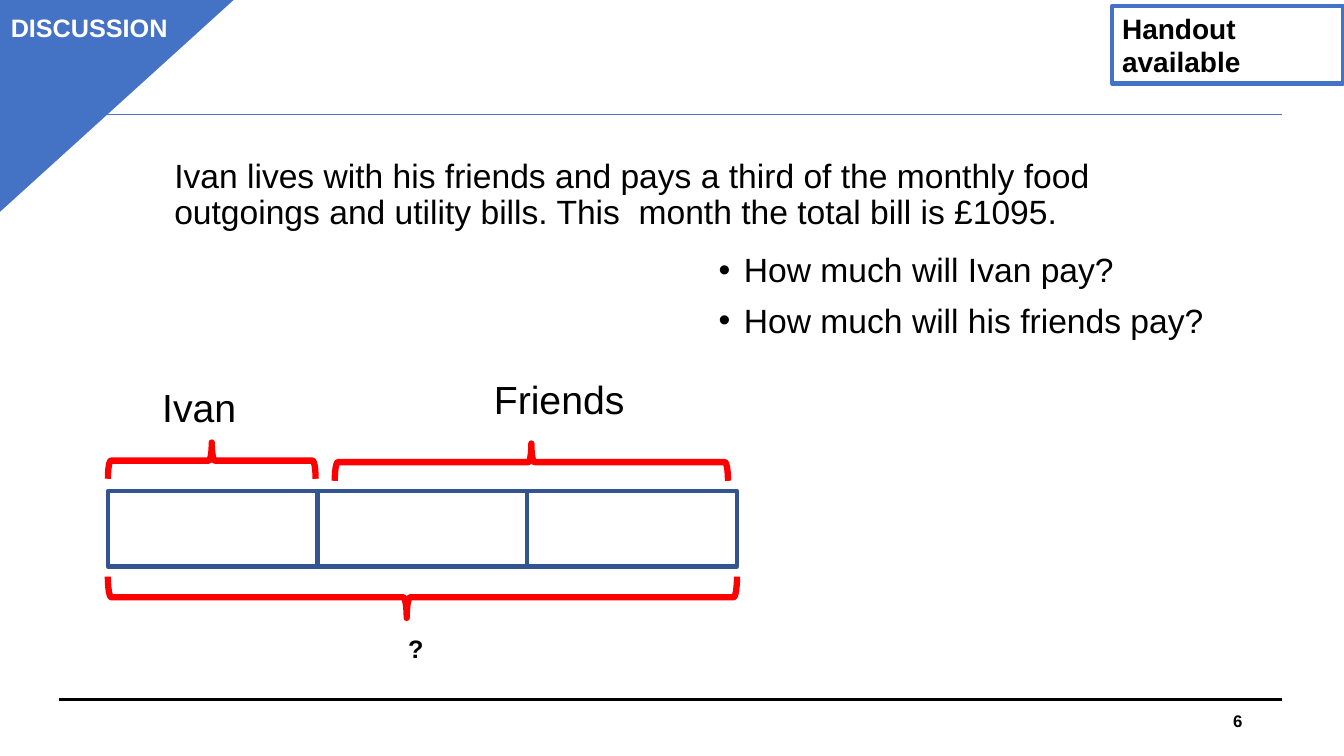
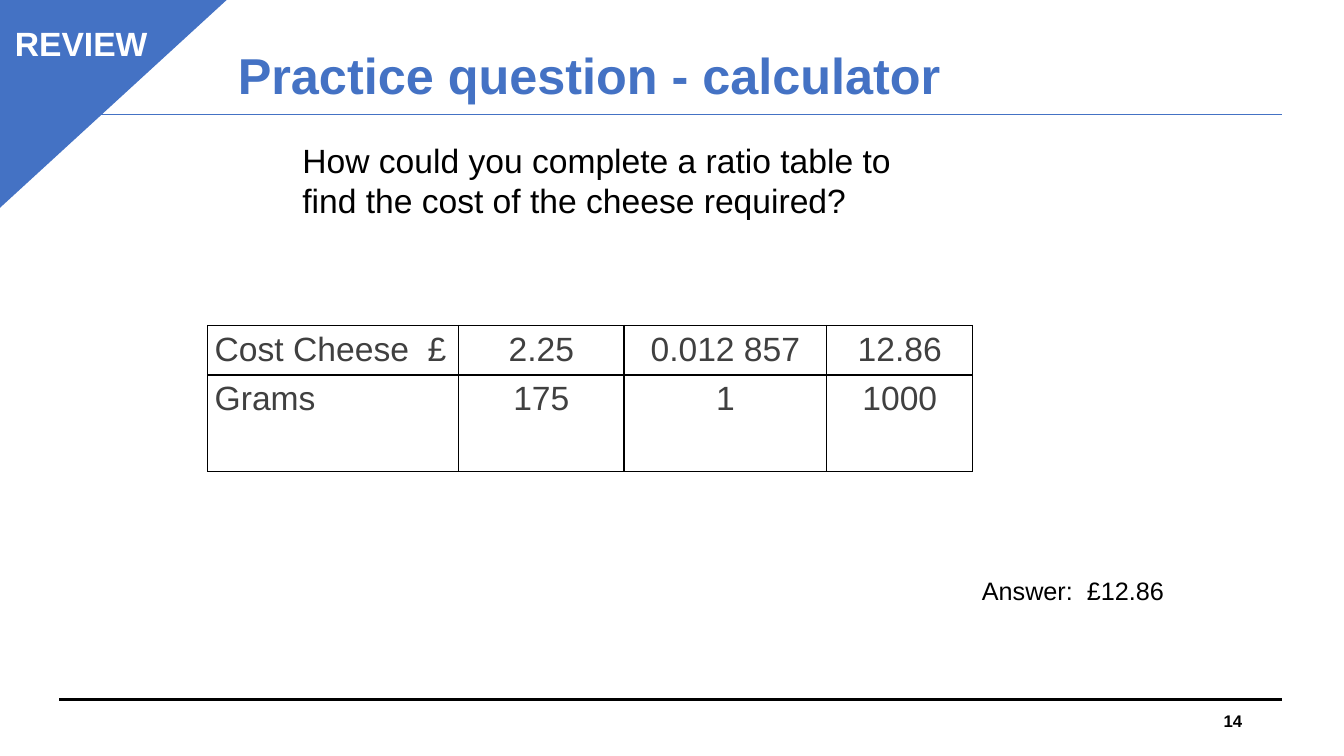
from dataclasses import dataclass

from lxml import etree
from pptx import Presentation
from pptx import util as u
from pptx.dml import color as dml
from pptx.enum import shapes as es, text as et
from pptx.oxml import ns
from pptx.slide import Slide
from pptx.text.text import TextFrame

COLORS = {
    "accent": "4472C4",
    "bar_edge": "325491",
    "brace": "FF0000",
    "ink": "000000",
    "table_ink": "404040",
    "paper": "FFFFFF",
}
FONT = "Arial"
PART_WIDTH = 2.08


@dataclass(frozen=True)
class Box:
    left: float
    top: float
    width: float
    height: float

    def lengths(self) -> tuple:
        return tuple(u.Inches(v) for v in (self.left, self.top, self.width, self.height))


@dataclass(frozen=True)
class Rule:
    top: float
    color: str


@dataclass(frozen=True)
class Brace:
    box: Box
    rotation: int
    point: float = 0.5


@dataclass(frozen=True)
class Corner:
    triangle: Box
    label: str
    label_box: Box
    size: int


RULES = (Rule(6.94, "ink"), Rule(1.14, "accent"))
BAR_PARTS = [Box(1.07 + i * PART_WIDTH, 4.87, PART_WIDTH, 0.75) for i in range(3)]
BRACES = (
    Brace(Box(1.07, 5.72, 6.24, 0.41), 270, 0.475),
    Brace(Box(1.07, 4.39, 2.06, 0.36), 90),
    Brace(Box(3.32, 4.4, 3.9, 0.37), 90),
)
DISCUSSION = Corner(Box(-0.03, -0.02, 2.36, 2.14), "DISCUSSION", Box(0, 0.07, 1.77, 0.4), 18)
REVIEW = Corner(Box(-0.03, -0.02, 2.29, 2.1), "REVIEW", Box(-0.02, 0.18, 1.65, 0.5), 24)
RATIO_ROWS = (
    ("Cost Cheese  £", "2.25", "0.012 857", "12.86"),
    ("Grams", "175", "1", "1000"),
)
RATIO_WIDTHS = (2.49, 1.64, 2.01, 1.45)
RATIO_HEIGHTS = (0.49, 0.96)


def rgb(name: str) -> dml.RGBColor:
    return dml.RGBColor.from_string(COLORS[name])


def write_text(frame: TextFrame, content: str, *, size: float = 18, color: str = "ink",
               bold: bool = False, align=et.PP_ALIGN.LEFT, spacing: float = 1.0,
               before: float = 0, after: float = 0, bullet: str = "") -> None:
    for index, wording in enumerate(content.split("\n")):
        paragraph = frame.add_paragraph() if index else frame.paragraphs[0]
        paragraph.alignment = align
        paragraph.line_spacing = spacing
        paragraph.space_before = u.Pt(before if index else 0)
        paragraph.space_after = u.Pt(after)
        if bullet:
            properties = paragraph._p.get_or_add_pPr()
            properties.set("marL", str(u.Inches(0.25)))
            properties.set("indent", str(u.Inches(-0.25)))
            etree.SubElement(properties, ns.qn("a:buFont"), typeface=FONT)
            etree.SubElement(properties, ns.qn("a:buChar"), char=bullet)
        run = paragraph.add_run()
        run.text = wording
        run.font.name = FONT
        run.font.size = u.Pt(size)
        run.font.bold = bold
        run.font.color.rgb = rgb(color)


def add_text(slide: Slide, box: Box, content: str, anchor=et.MSO_ANCHOR.TOP, **style) -> None:
    frame = slide.shapes.add_textbox(*box.lengths()).text_frame
    frame.word_wrap = True
    frame.vertical_anchor = anchor
    write_text(frame, content, **style)


def add_figure(slide: Slide, preset, box: Box, edge: str, weight: float, fill: str = ""):
    figure = slide.shapes.add_shape(preset, *box.lengths())
    figure.shadow.inherit = False
    if fill:
        figure.fill.solid()
        figure.fill.fore_color.rgb = rgb(fill)
    else:
        figure.fill.background()
    figure.line.color.rgb = rgb(edge)
    figure.line.width = u.Pt(weight)
    return figure


def add_brace(slide: Slide, brace: Brace) -> None:
    box = brace.box
    shift = (box.width - box.height) / 2
    upright = Box(box.left + shift, box.top - shift, box.height, box.width)
    figure = add_figure(slide, es.MSO_SHAPE.LEFT_BRACE, upright, "brace", 4.5)
    figure.adjustments[0] = 0.083
    figure.adjustments[1] = brace.point
    figure.rotation = brace.rotation


def add_corner(slide: Slide, corner: Corner) -> None:
    triangle = add_figure(slide, es.MSO_SHAPE.ISOSCELES_TRIANGLE, corner.triangle,
                          "accent", 1, "accent")
    triangle.adjustments[0] = 0
    triangle._element.spPr.xfrm.set("flipV", "1")
    add_text(slide, corner.label_box, corner.label, size=corner.size, color="paper",
             bold=True, align=et.PP_ALIGN.CENTER)


def start_slide(deck, number: int, corner: Corner) -> Slide:
    slide = deck.slides.add_slide(deck.slide_layouts[6])
    for rule in RULES:
        line = slide.shapes.add_connector(
            es.MSO_CONNECTOR.STRAIGHT, u.Inches(0.59), u.Inches(rule.top),
            u.Inches(12.72), u.Inches(rule.top))
        line.line.color.rgb = rgb(rule.color)
        line.line.width = u.Pt(1.5 if rule.color == "ink" else 0.75)
        etree.SubElement(line._element.spPr, ns.qn("a:effectLst"))
    add_corner(slide, corner)
    add_text(slide, Box(9.42, 6.95, 3, 0.4), str(number), et.MSO_ANCHOR.MIDDLE,
             size=12, bold=True, align=et.PP_ALIGN.RIGHT)
    return slide


def set_borders(cell) -> None:
    properties = cell._tc.get_or_add_tcPr()
    for position, side in enumerate(("lnL", "lnR", "lnT", "lnB")):
        border = etree.Element(ns.qn(f"a:{side}"), w=str(u.Pt(1)))
        fill = etree.SubElement(border, ns.qn("a:solidFill"))
        etree.SubElement(fill, ns.qn("a:srgbClr"), val=COLORS["ink"])
        properties.insert(position, border)


def add_ratio_table(slide: Slide) -> None:
    box = Box(2.06, 3.23, sum(RATIO_WIDTHS), sum(RATIO_HEIGHTS))
    table = slide.shapes.add_table(len(RATIO_ROWS), len(RATIO_WIDTHS), *box.lengths()).table
    table.first_row = False
    table.horz_banding = False
    for column, width in zip(table.columns, RATIO_WIDTHS):
        column.width = u.Inches(width)
    for row, height, values in zip(table.rows, RATIO_HEIGHTS, RATIO_ROWS):
        row.height = u.Inches(height)
        for index, (cell, value) in enumerate(zip(row.cells, values)):
            cell.margin_left = cell.margin_right = u.Inches(0.07)
            cell.margin_top = cell.margin_bottom = u.Inches(0)
            cell.fill.background()
            set_borders(cell)
            write_text(cell.text_frame, value, size=24, color="table_ink", spacing=1.15, after=4,
                       align=et.PP_ALIGN.CENTER if index else et.PP_ALIGN.LEFT)


def build_discussion(deck) -> None:
    slide = start_slide(deck, 6, DISCUSSION)
    add_text(slide, Box(1.63, 1.53, 9.79, 0.9),
             "Ivan lives with his friends and pays a third of the monthly food outgoings "
             "and utility bills. This  month the total bill is £1095.", size=24, spacing=0.9)
    add_text(slide, Box(7.03, 2.47, 5.89, 1.28),
             "How much will Ivan pay?\nHow much will his friends pay?",
             size=24, spacing=0.9, before=10, bullet="•")
    for part in BAR_PARTS:
        add_figure(slide, es.MSO_SHAPE.RECTANGLE, part, "bar_edge", 3, "paper")
    for brace in BRACES:
        add_brace(slide, brace)
    add_text(slide, Box(1.51, 3.75, 1.02, 0.57), "Ivan", size=28)
    add_text(slide, Box(4.8, 3.67, 1.59, 0.57), "Friends", size=28)
    add_text(slide, Box(3.95, 6.23, 1.59, 0.41), "?", bold=True)
    handout = add_figure(slide, es.MSO_SHAPE.RECTANGLE, Box(11.03, 0.06, 2.29, 0.77), "accent", 3)
    handout.text_frame.vertical_anchor = et.MSO_ANCHOR.MIDDLE
    write_text(handout.text_frame, "Handout\navailable", size=20, bold=True)


def build_review(deck) -> None:
    slide = start_slide(deck, 14, REVIEW)
    add_text(slide, Box(2.26, 0.05, 9.55, 1.45), "Practice question - calculator",
             et.MSO_ANCHOR.MIDDLE, size=36, color="accent", bold=True, spacing=0.9)
    add_text(slide, Box(2.9, 1.34, 6.39, 0.91),
             "How could you complete a ratio table to\nfind the cost of the cheese required?",
             size=24)
    add_ratio_table(slide)
    add_text(slide, Box(9.64, 5.66, 3, 0.4), "Answer:  £12.86")


def main() -> None:
    deck = Presentation()
    deck.slide_width = u.Inches(13.33)
    deck.slide_height = u.Inches(7.5)
    build_discussion(deck)
    build_review(deck)
    deck.save("out.pptx")


if __name__ == "__main__":
    main()
